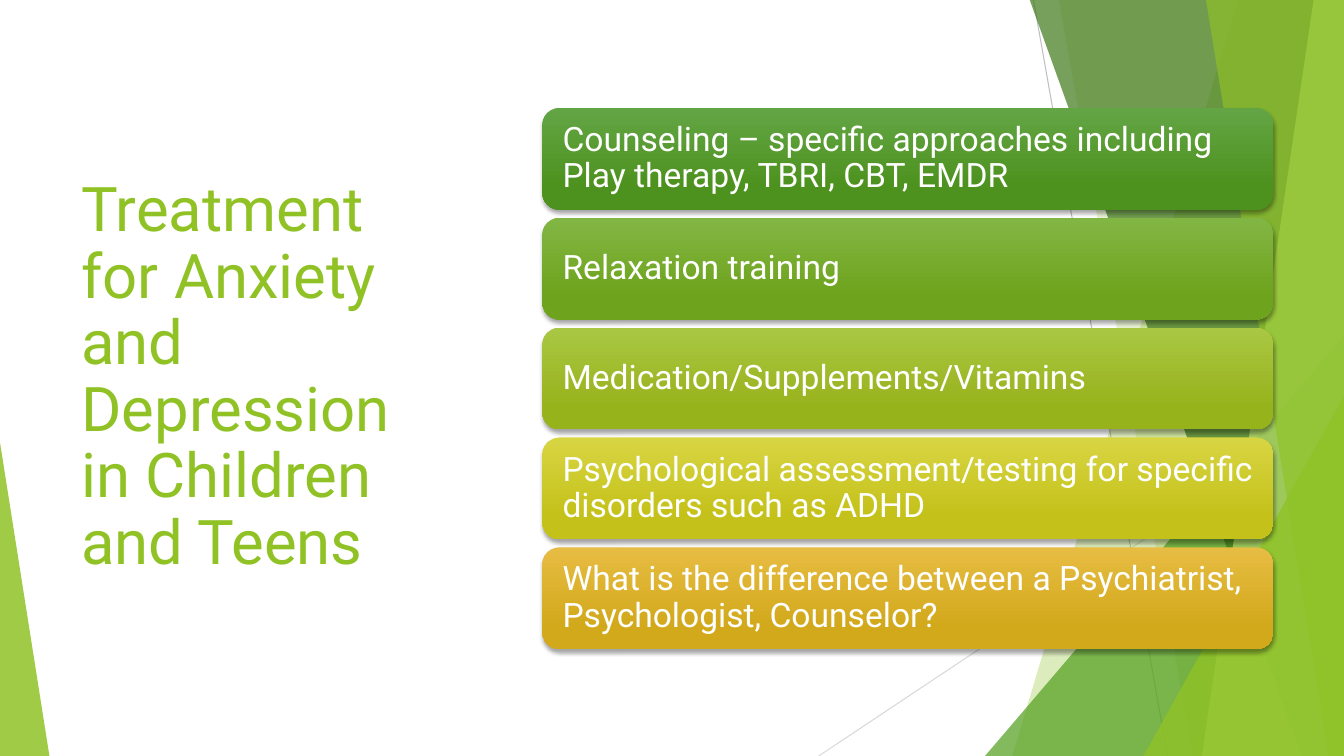
import pptx
import pptx.dml.color
import pptx.enum.shapes
import pptx.enum.text
import pptx.oxml
import pptx.oxml.ns
import pptx.util

PX = 9144
NS = pptx.oxml.ns.nsdecls("a")


def px(n):
    return pptx.util.Emu(n * PX)


def rgb(value):
    return pptx.dml.color.RGBColor.from_string(value)


class SlideBuilder:
    font = "Roboto"
    title_color = "90C226"
    text_color = "FFFFFF"

    def __init__(self, s):
        self.s = s

    def line(self, x1, y1, x2, y2, color):
        c = self.s.shapes.add_connector(
            pptx.enum.shapes.MSO_CONNECTOR.STRAIGHT, px(x1), px(y1), px(x2), px(y2))
        c.line.color.rgb = rgb(color)
        c.line.width = pptx.util.Pt(0.75)
        c._element.spPr.append(pptx.oxml.parse_xml(f"<a:effectLst {NS}/>"))

    def tint(self, sp, color, opacity):
        sp.shadow.inherit = False
        sp.line.fill.background()
        sp.fill.solid()
        sp.fill.fore_color.rgb = rgb(color)
        clr = sp._element.spPr.find(".//" + pptx.oxml.ns.qn("a:srgbClr"))
        clr.append(pptx.oxml.parse_xml(f'<a:alpha {NS} val="{opacity * 1000}"/>'))

    def facet(self, top, bottom, color, opacity):
        fb = self.s.shapes.build_freeform(top, -1, scale=PX)
        fb.add_line_segments([(1333, -1), (1333, 750), (bottom, 750)], close=True)
        self.tint(fb.convert_to_shape(), color, opacity)

    def triangle(self, x, y, w, h, apex, color, opacity):
        sp = self.s.shapes.add_shape(
            pptx.enum.shapes.MSO_SHAPE.ISOSCELES_TRIANGLE, px(x), px(y), px(w), px(h))
        sp.adjustments[0] = apex
        self.tint(sp, color, opacity)

    def text(self, sp, text, size, color):
        tf = sp.text_frame
        tf.word_wrap = True
        tf.vertical_anchor = pptx.enum.text.MSO_ANCHOR.MIDDLE
        p = tf.paragraphs[0]
        p.text = text
        p.alignment = pptx.enum.text.PP_ALIGN.LEFT
        p.line_spacing = 0.9
        p.font.name = self.font
        p.font.size = pptx.util.Pt(size)
        p.font.color.rgb = rgb(color)

    def title(self, x, y, w, h, text):
        sp = self.s.shapes.add_textbox(px(x), px(y), px(w), px(h))
        self.text(sp, text, 44, self.title_color)

    def bar(self, x, y, w, h, text, top_color, bottom_color):
        sp = self.s.shapes.add_shape(
            pptx.enum.shapes.MSO_SHAPE.ROUNDED_RECTANGLE, px(x), px(y), px(w), px(h))
        sp.line.fill.background()
        sp.fill.gradient()
        sp.fill.gradient_angle = 270
        stops = zip(sp.fill.gradient_stops, (0, 0.78), (top_color, bottom_color))
        for stop, position, color in stops:
            stop.position = position
            stop.color.rgb = rgb(color)
        sp.shadow.inherit = False
        effects = sp._element.spPr.find(pptx.oxml.ns.qn("a:effectLst"))
        effects.append(pptx.oxml.parse_xml(
            f'<a:outerShdw {NS} blurRad="38100" dist="25400" dir="5400000" rotWithShape="0">'
            '<a:srgbClr val="000000"><a:alpha val="35000"/></a:srgbClr></a:outerShdw>'))
        sp.text_frame.margin_left = sp.text_frame.margin_right = px(15)
        self.text(sp, text, 24, self.text_color)


TREATMENTS = [
    ("Counseling – specific approaches including Play therapy, TBRI, CBT, EMDR", "63A545", "4D921E"),
    ("Relaxation training", "82B644", "6EA31D"),
    ("Medication/Supplements/Vitamins", "AAC744", "97B31C"),
    ("Psychological assessment/testing for specific disorders such as ADHD", "D8D543", "C4C11A"),
    ("What is the difference between a Psychiatrist, Psychologist, Counselor?", "E7BC43", "D2A91B"),
]


def main():
    prs = pptx.Presentation()
    prs.slide_width = pptx.util.Inches(13.33)
    prs.slide_height = pptx.util.Inches(7.5)
    b = SlideBuilder(prs.slides.add_slide(prs.slide_layouts[6]))

    b.line(1025, 0, 1158, 750, "BFBFBF")
    b.line(1333, 403, 812, 750, "D9D9D9")
    b.facet(1228, 1004, "90C226", 30)
    b.facet(1050, 1183, "90C226", 20)
    b.triangle(977, 333, 356, 417, 1, "54A021", 72)
    b.facet(1021, 1291, "3F7819", 70)
    b.facet(1303, 1192, "C0E474", 70)
    b.facet(1196, 1318, "90C226", 65)
    b.triangle(1134, 393, 199, 357, 1, "90C226", 80)
    b.triangle(0, 439, 49, 311, 0, "90C226", 85)

    b.title(71, 151, 388, 448, "Treatment for Anxiety and Depression in Children and Teens")
    for i, (text, top_color, bottom_color) in enumerate(TREATMENTS):
        b.bar(538, 107 + i * 109, 725, 101, text, top_color, bottom_color)

    prs.save("out.pptx")


if __name__ == "__main__":
    main()
